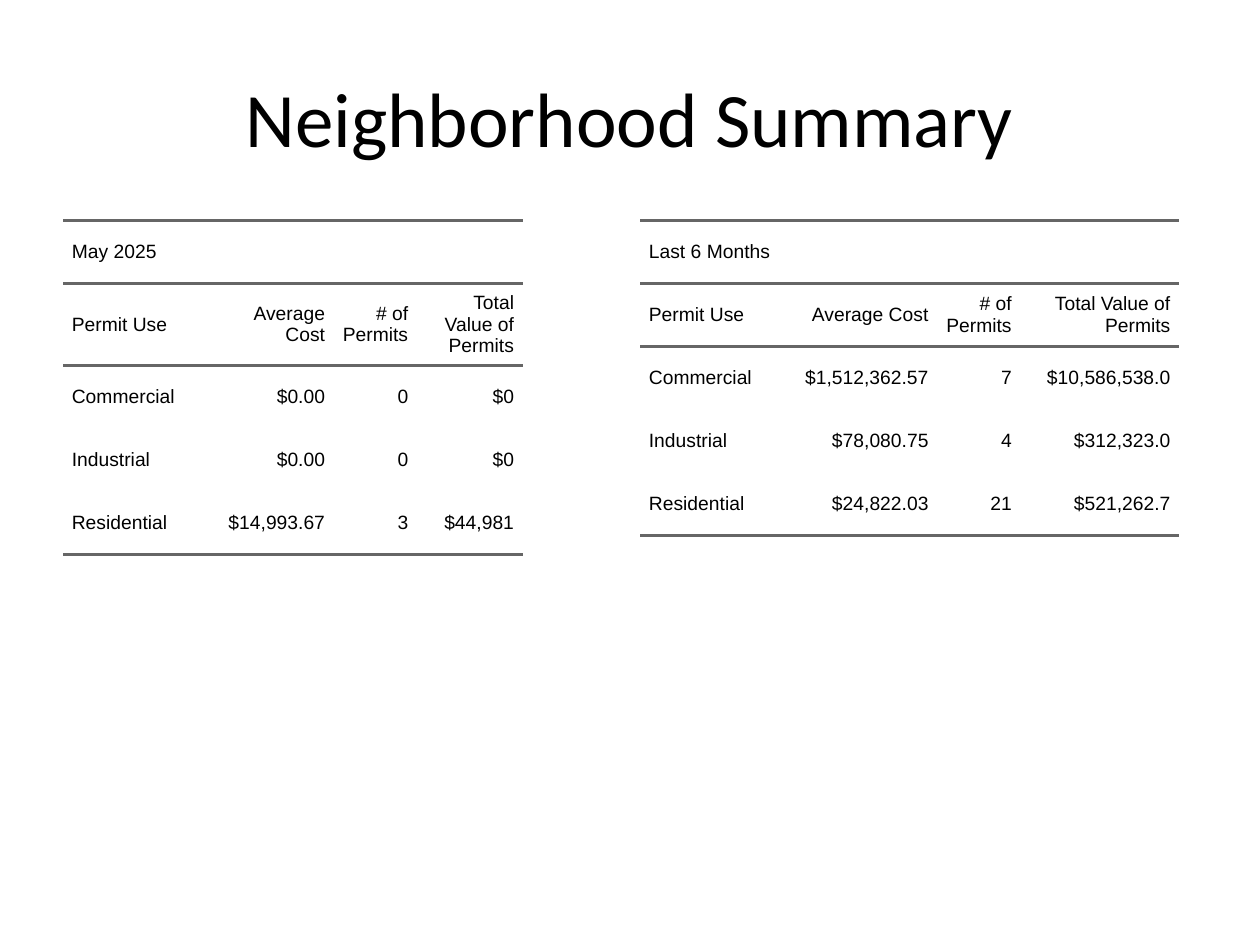
"""Build the neighborhood permit summary slide."""
from lxml import etree
from pptx import Presentation
from pptx import util as u
from pptx.dml import color
from pptx.enum import text
from pptx.oxml import ns

WIDTH, HEIGHT = 10, 7.5
MARGIN = 0.05 * WIDTH
TABLE_TOP, TABLE_WIDTH, TABLE_HEIGHT = 1.75, 4.42, 4.95
ROW_HEIGHT = 0.5
PADDING = 0.07
INK, RULE = "000000", "666666"
NO_STYLE = "{2D5ABB26-0587-4C30-8999-92F81FD0307C}"
HEADINGS = ["Permit Use", "Average Cost", "# of Permits", "Total Value of Permits"]
MONTH = [
    ["Commercial", "$0.00", "0", "$0"],
    ["Industrial", "$0.00", "0", "$0"],
    ["Residential", "$14,993.67", "3", "$44,981"],
]
HALF_YEAR = [
    ["Commercial", "$1,512,362.57", "7", "$10,586,538.0"],
    ["Industrial", "$78,080.75", "4", "$312,323.0"],
    ["Residential", "$24,822.03", "21", "$521,262.7"],
]


def rgb(value):
    """Turn a hex string into a colour."""
    return color.RGBColor.from_string(value)


def write(frame, words, font, size, align):
    """Write one styled paragraph and return it."""
    para = frame.paragraphs[0]
    para.text = words
    para.alignment = align
    para.font.name, para.font.size = font, u.Pt(size)
    para.font.color.rgb = rgb(INK)
    return para


def add_title(page, words):
    """Add the centred slide title."""
    box = page.shapes.add_textbox(
        u.Inches(MARGIN), u.Inches(0.04 * HEIGHT),
        u.Inches(WIDTH - 2 * MARGIN), u.Inches(HEIGHT / 6))
    box.text_frame.word_wrap = True
    box.text_frame.vertical_anchor = text.MSO_ANCHOR.MIDDLE
    write(box.text_frame, words, "Calibri", 44, text.PP_ALIGN.CENTER)


def add_rule(cell, side):
    """Draw a grey border on one side of a cell."""
    properties = cell._tc.get_or_add_tcPr()
    line = etree.SubElement(properties, ns.qn(f"a:ln{side}"), w=str(u.Pt(1.5)))
    fill = etree.SubElement(line, ns.qn("a:solidFill"))
    etree.SubElement(fill, ns.qn("a:srgbClr"), val=RULE)


def fill_cell(cell, words, align, sides):
    """Set the wording, padding and borders of a cell."""
    cell.margin_left = 0
    cell.margin_top = cell.margin_right = cell.margin_bottom = u.Inches(PADDING)
    cell.vertical_anchor = text.MSO_ANCHOR.MIDDLE
    for side in sides:
        add_rule(cell, side)
    cell.fill.background()
    para = write(cell.text_frame, words, "Arial", 11, align)
    para.space_before = para.space_after = u.Pt(5)
    indent = para._p.get_or_add_pPr()
    indent.set("marL", str(u.Inches(PADDING)))
    indent.set("indent", "0")


def add_permit_table(page, left, widths, period, records):
    """Add a permit table headed by its period."""
    rows = [[period, "", "", ""], HEADINGS, *records]
    frame = page.shapes.add_table(
        len(rows), len(widths), u.Inches(left), u.Inches(TABLE_TOP),
        u.Inches(TABLE_WIDTH), u.Inches(TABLE_HEIGHT))
    table = frame.table
    table.first_row = table.horz_banding = False
    table._tbl.tblPr.find(ns.qn("a:tableStyleId")).text = NO_STYLE
    for column, width in zip(table.columns, widths):
        column.width = u.Inches(width)
    for row in table.rows:
        row.height = u.Inches(ROW_HEIGHT)
    frame.width, frame.height = u.Inches(TABLE_WIDTH), u.Inches(TABLE_HEIGHT)
    table.cell(0, 0).merge(table.cell(0, len(widths) - 1))
    borders = ["TB", "TB"] + [""] * (len(records) - 1) + ["B"]
    for r, (values, sides) in enumerate(zip(rows, borders)):
        for c, value in enumerate(values):
            align = text.PP_ALIGN.RIGHT if c else text.PP_ALIGN.LEFT
            fill_cell(table.cell(r, c), value, align, sides)


def main():
    """Build and save the deck."""
    deck = Presentation()
    deck.slide_width, deck.slide_height = u.Inches(WIDTH), u.Inches(HEIGHT)
    page = deck.slides.add_slide(deck.slide_layouts[6])
    add_permit_table(page, MARGIN, [1.1, 1.05, 0.66, 0.84], "May 2025", MONTH)
    add_permit_table(page, WIDTH - MARGIN - TABLE_WIDTH, [1.1, 1.26, 0.66, 1.26],
                     "Last 6 Months", HALF_YEAR)
    add_title(page, "Neighborhood Summary")
    deck.save("out.pptx")


if __name__ == "__main__":
    main()
